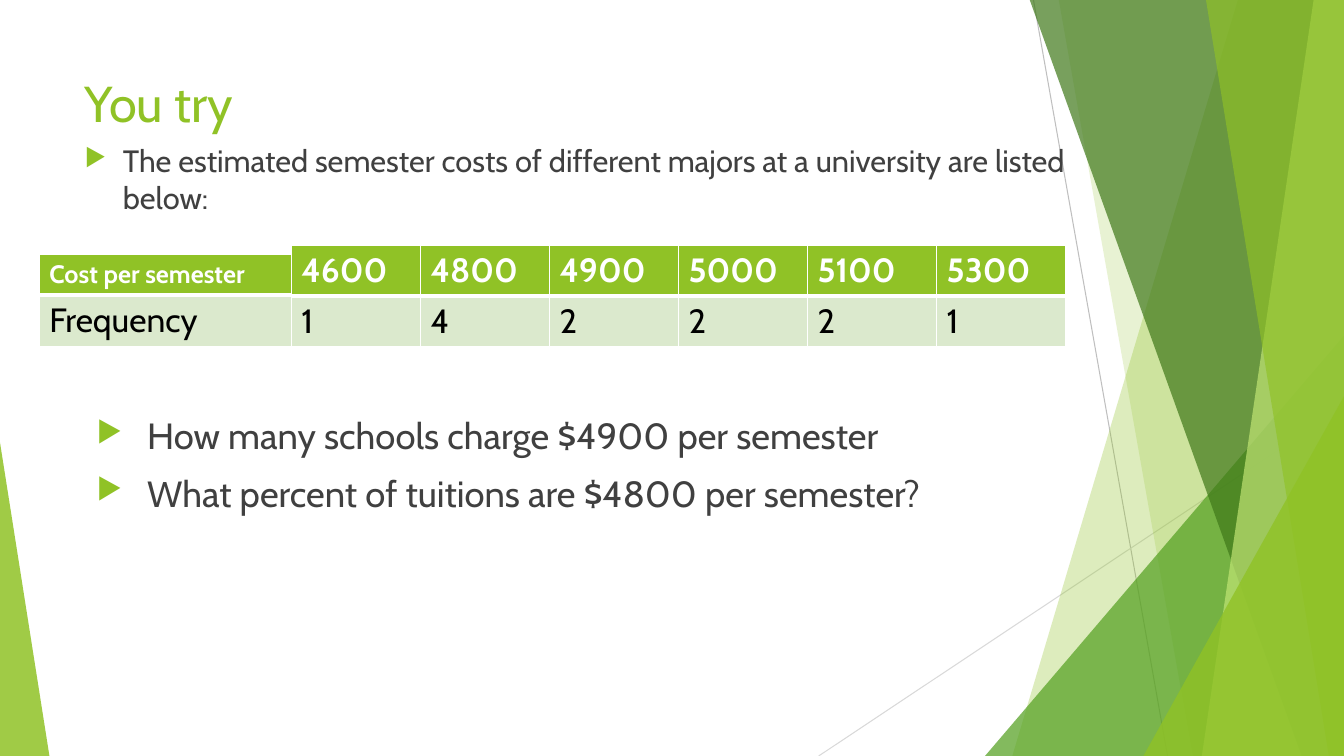
from pptx import Presentation
from pptx.dml.color import RGBColor as RGB
from pptx.enum.shapes import MSO_CONNECTOR as Conn, MSO_SHAPE as Kind
from pptx.enum.text import MSO_ANCHOR as Anchor, MSO_AUTO_SIZE as Fit, PP_ALIGN as Align
from pptx.oxml.ns import qn
from pptx.util import Inches, Pt
from lxml.etree import SubElement as Sub

HEX = {"lime": "90C226", "leaf": "54A021", "pine": "3F7819", "pale": "C0E474",
       "mint": "DBE9CD", "ink": "404040", "black": "000000", "white": "FFFFFF",
       "gray": "BFBFBF", "mist": "D9D9D9"}
TITLE = {"size": 36, "color": "lime"}
LEAD = {"size": 22, "color": "ink"}
ASK = {"size": 26, "color": "ink"}
LABEL = {"size": 18, "color": "white", "bold": True}
HEAD = {"size": 24, "color": "white", "bold": True}
CELL = {"size": 24, "color": "black", "bold": False}


class Deck:
    def __init__(self, wide, high, font):
        self.prs = Presentation()
        self.prs.slide_width, self.prs.slide_height = Inches(wide), Inches(high)
        self.font = font
        self.slide = self.prs.slides.add_slide(self.prs.slide_layouts[5])
        self.shapes = self.slide.shapes

    def words(self, para, text, style):
        run = para.add_run()
        run.text = text
        run.font.name = self.font
        for key, val in style.items():
            if key == "color":
                run.font.color.rgb = RGB.from_string(HEX[val])
            else:
                setattr(run.font, key, Pt(val) if key == "size" else val)

    def frame(self, shape):
        form = {"word_wrap": True, "auto_size": Fit.NONE, "vertical_anchor": Anchor.TOP}
        for key, val in form.items():
            setattr(shape.text_frame, key, val)
        return shape.text_frame

    def paint(self, shape, color, alpha):
        shape.shadow.inherit = False
        shape.line.fill.background()
        shape.fill.solid()
        shape.fill.fore_color.rgb = RGB.from_string(HEX[color])
        tone = shape._element.spPr.find(qn("a:solidFill"))[0]
        Sub(tone, qn("a:alpha"), val=str(alpha * 1000))

    def line(self, ends, color):
        line = self.shapes.add_connector(Conn.STRAIGHT, *map(Inches, ends))
        line.line.width = Pt(0.75)
        line.line.color.rgb = RGB.from_string(HEX[color])
        Sub(line._element.spPr, qn("a:effectLst"))

    def blade(self, top, edge, foot, color, alpha):
        """Band from the slide's top to its foot, ending at the right edge."""
        spots = [(edge, -0.01), (edge, 7.5), (foot, 7.5)]
        form = self.shapes.build_freeform(Inches(top), Inches(-0.01))
        form.add_line_segments([tuple(map(Inches, s)) for s in spots], close=True)
        self.paint(form.convert_to_shape(), color, alpha)

    def wedge(self, box, tip, color, alpha):
        shape = self.shapes.add_shape(Kind.ISOSCELES_TRIANGLE, *map(Inches, box))
        shape.adjustments[0] = tip
        self.paint(shape, color, alpha)

    def title(self, box, text):
        shape = self.shapes.title
        self.shapes._spTree.append(shape._element)  # in front of the blades
        for key, val in zip(("left", "top", "width", "height"), box):
            setattr(shape, key, Inches(val))
        para = self.frame(shape).paragraphs[0]
        para.alignment = Align.LEFT
        self.words(para, text, TITLE)

    def list(self, box, items):
        frame = self.frame(self.shapes.add_textbox(*map(Inches, box)))
        for i, (text, style, left, hang, gap) in enumerate(items):
            para = frame.add_paragraph() if i else frame.paragraphs[0]
            para.space_before = Pt(gap)
            self.words(para, text, style)
            props = para._p.get_or_add_pPr()
            props.set("marL", str(Inches(left)))
            props.set("indent", str(-Inches(hang)))
            Sub(Sub(props, qn("a:buClr")), qn("a:srgbClr"), val=HEX["lime"])
            Sub(props, qn("a:buSzPct"), val="80000")
            Sub(props, qn("a:buChar"), char="▶")

    def edges(self, cell, top, foot):
        props = cell._tc.get_or_add_tcPr()
        sides = {"lnL": 1, "lnR": 1, "lnT": top, "lnB": foot}
        for i, (side, width) in enumerate(sides.items()):
            edge = props.makeelement(qn("a:" + side), {"w": str(Pt(width))})
            Sub(Sub(edge, qn("a:solidFill")), qn("a:srgbClr"), val=HEX["white"])
            props.insert(i, edge)

    def table(self, left, top, wide, highs, rows, head):
        size = len(rows), len(rows[0])
        box = left, top, wide * size[1], sum(highs)
        table = self.shapes.add_table(*size, *map(Inches, box)).table
        table.horz_banding = False
        for col in table.columns:
            col.width = Inches(wide)
        looks = [(head, "lime", 1, 3), (CELL, "mint", 3, 1)]
        for r, (style, fill, roof, foot) in enumerate(looks):
            table.rows[r].height = Inches(highs[r])
            for c, text in enumerate(rows[r]):
                cell = table.cell(r, c)
                cell.fill.solid()
                cell.fill.fore_color.rgb = RGB.from_string(HEX[fill])
                self.edges(cell, roof, foot)
                self.words(cell.text_frame.paragraphs[0], text, style)


def main():
    deck = Deck(13.33, 7.5, "Cabin")

    # Background lines and blades
    deck.line((10.25, 0, 11.58, 7.5), "gray")
    deck.line((13.33, 4.03, 8.12, 7.5), "mist")
    deck.blade(12.28, 13.33, 10.04, "lime", 30)
    deck.blade(10.5, 13.33, 11.83, "lime", 20)
    deck.wedge((9.77, 3.33, 3.56, 4.17), 1, "leaf", 72)
    deck.blade(10.21, 13.33, 12.91, "pine", 70)
    deck.blade(13.03, 13.33, 11.92, "pale", 70)
    deck.blade(11.96, 13.33, 13.18, "lime", 65)
    deck.wedge((11.34, 3.93, 1.99, 3.57), 1, "lime", 80)
    deck.wedge((0, 4.39, 0.49, 3.11), 0, "lime", 85)

    # Title and questions; the wide gap leaves room for the tables
    deck.title((0.74, 0.67, 9.4, 1.44), "You try")
    deck.list((0.74, 1.36, 10.22, 5.25), [
        ("The estimated semester costs of different majors at a university are listed below:",
         LEAD, 0.38, 0.38, 10),
        ("How many schools charge $4900 per semester", ASK, 0.62, 0.5, 141),
        ("What percent of tuitions are $4800 per semester?", ASK, 0.62, 0.5, 10)])

    # Row labels, then costs with their counts
    deck.table(0.39, 2.52, 2.61, (0.41, 0.5),
               [["Cost per semester"], ["Frequency"]], LABEL)
    costs = {"4600": "1", "4800": "4", "4900": "2", "5000": "2", "5100": "2", "5300": "1"}
    deck.table(2.89, 2.43, 1.28, (0.5, 0.5), [list(costs), list(costs.values())], HEAD)

    deck.prs.save("out.pptx")


if __name__ == "__main__":
    main()
